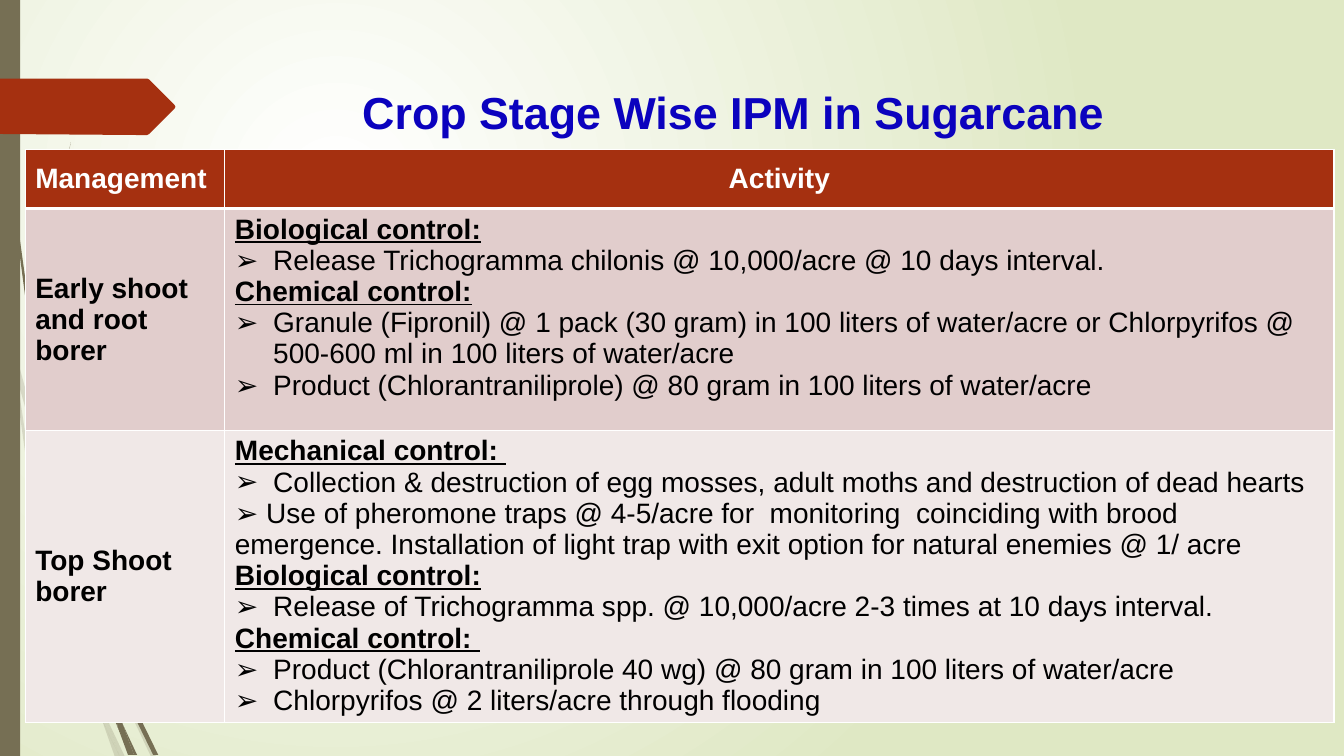
import pptx
import pptx.util
import pptx.dml.color
import pptx.enum.shapes
import pptx.enum.text
import pptx.oxml
import pptx.oxml.ns
from lxml import etree

PX = 9144  # EMU per px, 100 px to the inch
RGB = pptx.dml.color.RGBColor
WHITE, BLACK = RGB(0xFF, 0xFF, 0xFF), RGB(0, 0, 0)
PALE_GREEN = RGB(0xDF, 0xE8, 0xC4)
OLIVE = RGB(0x76, 0x6F, 0x54)
RUST = RGB(0xA5, 0x30, 0x10)
BLUE = RGB(0x0B, 0x02, 0xBE)
ROSE, LIGHT_ROSE = RGB(0xE1, 0xCD, 0xCC), RGB(0xF0, 0xE8, 0xE7)
MIDDLE = pptx.enum.text.MSO_ANCHOR.MIDDLE
CENTER = pptx.enum.text.PP_ALIGN.CENTER
qn = pptx.oxml.ns.qn


def add_outline(shapes, points, color):
    builder = shapes.build_freeform(*points[0], scale=PX)
    builder.add_line_segments(points[1:], close=True)
    sp = builder.convert_to_shape()
    sp.shadow.inherit = False
    sp.fill.solid()
    sp.fill.fore_color.rgb = color
    sp.line.fill.background()
    return sp


def format_runs(p, size, color, bold, underline=False):
    for r in p.runs:
        r.font.name = "Arial"
        r.font.size = pptx.util.Pt(size)
        r.font.color.rgb = color
        r.font.bold = bold
        r.font.underline = underline


prs = pptx.Presentation()
prs.slide_width, prs.slide_height = 1333 * PX, 750 * PX
s = prs.slides.add_slide(prs.slide_layouts[5])

# Background: circular gradient around the upper left quarter
fill = s.background.fill
fill.gradient()
for stop, color in zip(fill.gradient_stops, (WHITE, PALE_GREEN)):
    stop.color.rgb = color
grad = s.element.find(".//" + qn("a:gradFill"))
grad.remove(grad.find(qn("a:lin")))
path = etree.SubElement(grad, qn("a:path"), path="circle")
etree.SubElement(path, qn("a:fillToRect"), l="50000", t="50000", r="100000", b="100000")

# Grass wisps: a faint group and a solid group
faint_wisps = [
    [(11, 350), (9, 322), (0, 282), (0, 299), (10, 344)],
    [(58, 522), (84, 599), (85, 586), (62, 520), (14, 345), (17, 376)],
    [(92, 607), (88, 596), (88, 610), (123, 694), (150, 751), (155, 751), (127, 692)],
    [(119, 751), (124, 751), (105, 711)],
    [(93, 683), (70, 619), (31, 469), (17, 376), (11, 350), (28, 470), (65, 621),
     (92, 693), (101, 714), (99, 707)],
    [(84, 599), (87, 646), (93, 683), (96, 692), (105, 711), (103, 706), (91, 646),
     (88, 610), (88, 608)],
    [(88, 584), (110, 462), (160, 349), (229, 245), (268, 198), (290, 175), (312, 154),
     (312, 153), (289, 175), (268, 197), (228, 244), (158, 348), (107, 461), (85, 584),
     (85, 586), (88, 596)],
    [(101, 714), (114, 751), (119, 751)],
    [(88, 608), (88, 610), (88, 596), (85, 586), (84, 599)],
    [(96, 692), (93, 683), (99, 707), (101, 714), (119, 751), (105, 711)],
]
solid_wisps = [
    [(7, 110), (17, 233), (33, 355), (56, 477), (57, 481), (55, 457), (55, 453),
     (36, 355), (19, 232), (8, 109), (5, 48), (4, 0), (3, 0), (4, 48)],
    [(88, 592), (106, 645), (106, 633), (106, 631), (93, 590), (60, 472), (64, 505)],
    [(113, 649), (110, 641), (111, 656), (132, 708), (152, 749), (157, 749), (136, 706)],
    [(110, 691), (98, 657), (72, 556), (64, 505), (57, 477), (68, 557), (93, 659),
     (111, 708), (117, 722), (116, 717)],
    [(60, 472), (58, 453), (54, 349), (58, 245), (63, 193), (70, 141), (62, 193),
     (56, 245), (52, 349), (55, 449)],
    [(133, 749), (136, 749), (122, 719)],
    [(57, 477), (64, 505), (60, 472), (55, 449), (55, 453)],
    [(111, 633), (125, 552), (158, 476), (205, 406), (231, 374), (245, 359), (261, 344),
     (260, 344), (245, 358), (231, 373), (204, 405), (156, 474), (122, 551), (106, 631),
     (110, 641)],
    [(117, 722), (127, 749), (131, 749)],
    [(106, 645), (110, 691), (116, 706), (122, 719), (121, 716), (111, 656), (109, 651)],
    [(106, 645), (109, 651), (111, 656), (110, 641), (106, 631), (106, 633)],
    [(116, 706), (110, 691), (116, 717), (117, 722), (130, 749), (133, 749), (122, 719)],
]
for wisps, alpha in ((faint_wisps, 20000), (solid_wisps, None)):
    group = s.shapes.add_group_shape()
    for points in wisps:
        sp = add_outline(group.shapes, points, OLIVE)
        if alpha:
            srgb = sp.element.spPr.find(".//" + qn("a:srgbClr"))
            etree.SubElement(srgb, qn("a:alpha"), val=str(alpha))

# Left bar and arrow tab
bar = s.shapes.add_shape(pptx.enum.shapes.MSO_SHAPE.RECTANGLE, 0, 0, 20 * PX, 750 * PX)
bar.shadow.inherit = False
bar.fill.solid()
bar.fill.fore_color.rgb = OLIVE
bar.line.fill.background()
add_outline(s.shapes, [(0, 78), (146, 78), (148, 79), (173, 104), (174, 106), (173, 108),
                       (148, 133), (146, 134), (136, 134), (0, 133)], RUST)

# Title
title = s.shapes.title
title.left, title.top, title.width, title.height = 169 * PX, 74 * PX, 1117 * PX, 74 * PX
tf = title.text_frame
tf.text = "Crop Stage Wise IPM in Sugarcane"
tf.vertical_anchor = MIDDLE
tf.paragraphs[0].alignment = CENTER
format_runs(tf.paragraphs[0], 32, BLUE, True)
title.element.getparent().append(title.element)

# Table text: (kind, text) per paragraph
activities = [
    ("Early shoot and root borer", ROSE, [
        ("heading", "Biological control:"),
        ("bullet", "Release Trichogramma chilonis @ 10,000/acre @ 10 days interval."),
        ("heading", "Chemical control:"),
        ("bullet", "Granule (Fipronil) @ 1 pack (30 gram) in 100 liters of water/acre or "
                   "Chlorpyrifos @ 500-600 ml in 100 liters of water/acre"),
        ("bullet", "Product (Chlorantraniliprole) @ 80 gram in 100 liters of water/acre"),
    ]),
    ("Top Shoot borer", LIGHT_ROSE, [
        ("heading", "Mechanical control: "),
        ("bullet", "Collection & destruction of egg mosses, adult moths and destruction of "
                   "dead hearts"),
        ("flush bullet", " Use of pheromone traps @ 4-5/acre for  monitoring  coinciding with "
                         "brood emergence. Installation of light trap with exit option for "
                         "natural enemies @ 1/ acre"),
        ("heading", "Biological control:"),
        ("bullet", "Release of Trichogramma spp. @ 10,000/acre 2-3 times at 10 days interval."),
        ("heading", "Chemical control: "),
        ("bullet", "Product (Chlorantraniliprole 40 wg) @ 80 gram in 100 liters of water/acre"),
        ("bullet", "Chlorpyrifos @ 2 liters/acre through flooding"),
    ]),
]

# Table grid
table = s.shapes.add_table(3, 2, 25 * PX, 148 * PX, 1298 * PX, 569 * PX).table
for column, width in zip(table.columns, (198, 1100)):
    column.width = width * PX
for row, height in zip(table.rows, (59, 220, 290)):
    row.height = height * PX

# Header row and management column
labels = [(0, 0, "Management", RUST, WHITE), (0, 1, "Activity", RUST, WHITE)]
labels += [(i, 0, name, color, BLACK) for i, (name, color, _) in enumerate(activities, 1)]
for row, col, text, color, text_color in labels:
    cell = table.cell(row, col)
    cell.text = text
    cell.vertical_anchor = MIDDLE
    cell.fill.solid()
    cell.fill.fore_color.rgb = color
    format_runs(cell.text_frame.paragraphs[0], 20, text_color, True)
table.cell(0, 1).text_frame.paragraphs[0].alignment = CENTER

# Activity column
for row, (name, color, lines) in enumerate(activities, 1):
    cell = table.cell(row, 1)
    cell.fill.solid()
    cell.fill.fore_color.rgb = color
    cell.text = "\n".join(text for kind, text in lines)
    for p, (kind, text) in zip(cell.text_frame.paragraphs, lines):
        format_runs(p, 20, BLACK, kind == "heading", kind == "heading")
        if kind != "heading":
            pPr = p._p.get_or_add_pPr()
            indent = 38 * PX if kind == "bullet" else 0
            pPr.set("marL", str(indent))
            pPr.set("indent", str(-indent))
            etree.SubElement(pPr, qn("a:buFont"), typeface="Arial")
            etree.SubElement(pPr, qn("a:buChar"), char="➢")

# White cell borders, thicker under the header
for i, cell in enumerate(table.iter_cells()):
    tcPr = cell._tc.get_or_add_tcPr()
    for k, side in enumerate(("lnL", "lnR", "lnT", "lnB")):
        thick = (i < 2 and side == "lnB") or (2 <= i < 4 and side == "lnT")
        ln = etree.Element(qn("a:" + side), w=str(pptx.util.Pt(3 if thick else 1)))
        solid = etree.SubElement(ln, qn("a:solidFill"))
        etree.SubElement(solid, qn("a:srgbClr"), val=str(WHITE))
        tcPr.insert(k, ln)

prs.save("out.pptx")
